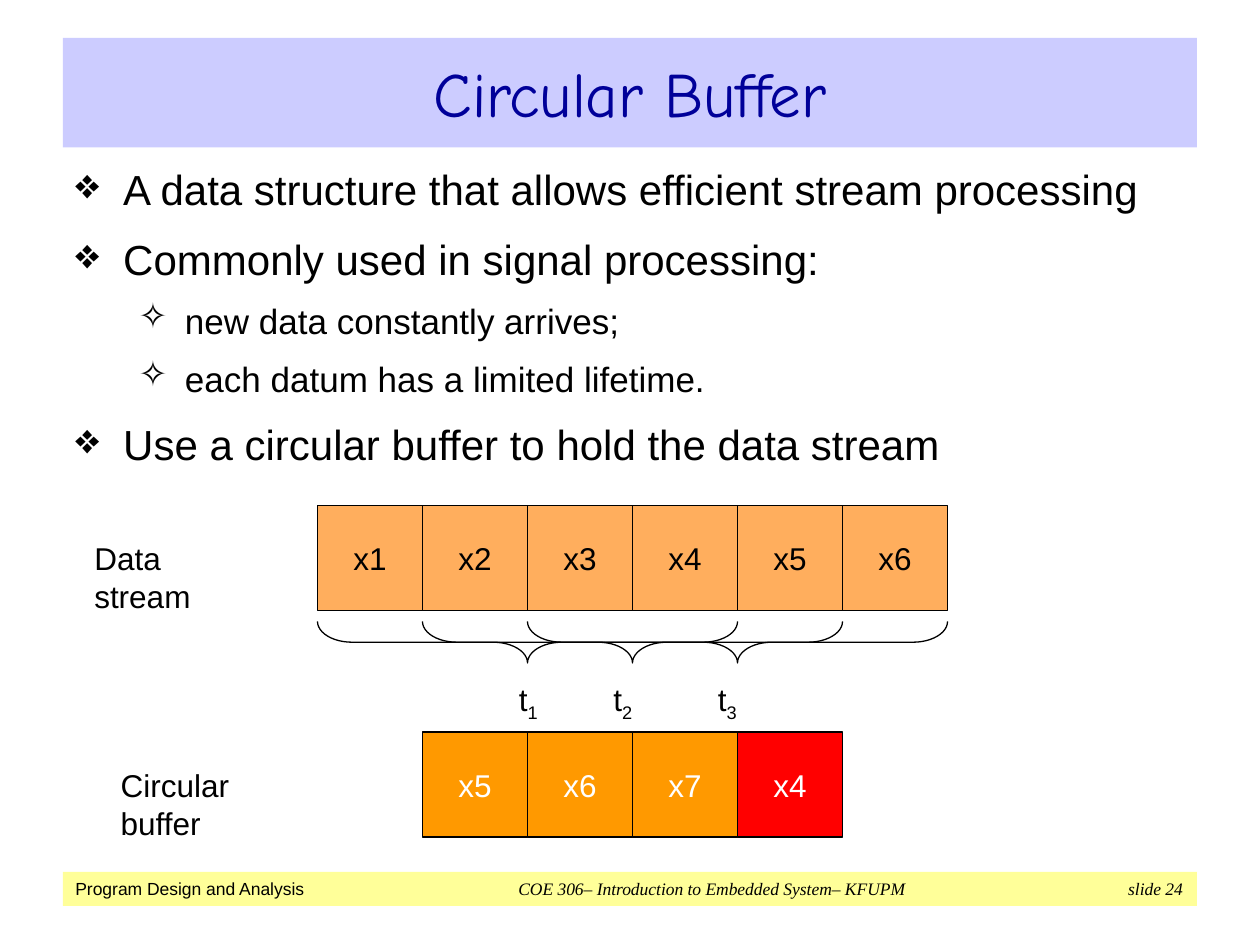
from lxml import etree
from pptx import Presentation
from pptx.dml.color import RGBColor
from pptx.enum.shapes import MSO_SHAPE
from pptx.enum.text import MSO_ANCHOR, PP_ALIGN
from pptx.oxml.ns import qn
from pptx.util import Inches, Pt

RECT, BRACE = MSO_SHAPE.RECTANGLE, MSO_SHAPE.LEFT_BRACE
MIDDLE, TOP = MSO_ANCHOR.MIDDLE, MSO_ANCHOR.TOP
CENTER, LEFT = PP_ALIGN.CENTER, PP_ALIGN.LEFT

BLACK = RGBColor(0x00, 0x00, 0x00)
WHITE = RGBColor(0xFF, 0xFF, 0xFF)
NAVY = RGBColor(0x00, 0x00, 0x99)
LAVENDER = RGBColor(0xCC, 0xCC, 0xFF)
YELLOW = RGBColor(0xFF, 0xFF, 0x99)
PEACH = RGBColor(0xFF, 0xAE, 0x5D)
ORANGE = RGBColor(0xFF, 0x99, 0x00)
RED = RGBColor(0xFF, 0x00, 0x00)

CELL = 5 / 6           # side of one square
STREAM_LEFT = 2.52
STREAM_TOP, BUFFER_TOP = 4.01, 5.81


def add_run(p, text, size=18, color=BLACK, font="Arial", italic=False):
    r = p.add_run()
    r.text = text
    for name, value in {"size": Pt(size), "name": font, "italic": italic}.items():
        setattr(r.font, name, value)
    r.font.color.rgb = color
    return r


def add_box(x, y, w, h, fill=None, line=None, kind=None, wrap=True,
            anchor=TOP, align=LEFT):
    at = [Inches(v) for v in (x, y, w, h)]
    if kind is None:
        sp = s.shapes.add_textbox(*at)
    else:
        sp = s.shapes.add_shape(kind, *at)
        sp.shadow.inherit = False
        for fmt, color in ((sp.fill, fill), (sp.line.fill, line)):
            if color is None:
                fmt.background()
            else:
                fmt.solid()
                fmt.fore_color.rgb = color
        if line is not None:
            sp.line.width = Pt(0.75)
    tf = sp.text_frame
    tf.word_wrap = wrap
    tf.vertical_anchor = anchor
    tf.paragraphs[0].alignment = align
    return sp


prs = Presentation()
prs.slide_width, prs.slide_height = Inches(10), Inches(7.5)
s = prs.slides.add_slide(prs.slide_layouts[6])

# Footer bar: one line with a centre tab and a right tab
sp = add_box(0.5, 6.92, 9, 0.27, YELLOW, kind=RECT, anchor=MIDDLE)
p = sp.text_frame.paragraphs[0]
tabs = etree.SubElement(p._p.get_or_add_pPr(), qn("a:tabLst"))
for pos, algn in ((5.05, "ctr"), (8.79, "r")):
    etree.SubElement(tabs, qn("a:tab"), pos=str(Inches(pos)), algn=algn)
add_run(p, "Program Design and Analysis", 10)
for text in ("\tCOE 306– Introduction to Embedded System– KFUPM", "\tslide 24"):
    add_run(p, text, 10, font="Times New Roman", italic=True)

# Title
sp = add_box(0.5, 0.3, 9, 0.87, LAVENDER, kind=RECT, anchor=MIDDLE, align=CENTER)
add_run(sp.text_frame.paragraphs[0], "Circular Buffer", 36, NAVY, "Comic Neue")

# Bullet list: size, space before, margin, hanging indent, bullet for each level
LEVELS = [(24, 11, 0.38, 0.38, "❖"), (20, 9, 0.87, 0.37, "✧")]
bullets = [
    (0, "A data structure that allows efficient stream processing"),
    (0, "Commonly used in signal processing:"),
    (1, "new data constantly arrives;"),
    (1, "each datum has a limited lifetime."),
    (0, "Use a circular buffer to hold the data stream"),
]
tf = add_box(0.5, 1.25, 9, 5.62).text_frame
for i, (level, text) in enumerate(bullets):
    size, before, margin, hang, char = LEVELS[level]
    p = tf.paragraphs[0] if i == 0 else tf.add_paragraph()
    p.level = level
    p.space_before = Pt(before)
    pPr = p._p.get_or_add_pPr()
    pPr.set("marL", str(Inches(margin)))
    pPr.set("indent", str(-Inches(hang)))
    etree.SubElement(pPr, qn("a:buChar"), char=char)
    add_run(p, text, size)

# Rows of cells: first column, top, text colour, (label, fill) of each cell
rows = [
    (0, STREAM_TOP, BLACK, [(f"x{n}", PEACH) for n in range(1, 7)]),
    (1, BUFFER_TOP, WHITE,
     [("x5", ORANGE), ("x6", ORANGE), ("x7", ORANGE), ("x4", RED)]),
]
for first, top, color, cells in rows:
    for col, (label, fill) in enumerate(cells, first):
        sp = add_box(STREAM_LEFT + col * CELL, top, CELL, CELL, fill, BLACK,
                     RECT, wrap=False, anchor=MIDDLE, align=CENTER)
        add_run(sp.text_frame.paragraphs[0], label, color=color)

# Windows of four cells, each a brace turned to point down, with its time
for i, label_left in enumerate((4.02, 4.77, 5.6)):
    span, depth = 4 * CELL, 0.33
    middle = STREAM_LEFT + i * CELL + span / 2
    sp = add_box(middle - depth / 2, 3.43, depth, span, line=BLACK, kind=BRACE)
    sp.rotation = 270
    sp.adjustments[0] = 0.83
    p = add_box(label_left, 5.35, 0.37, 0.4, wrap=False).text_frame.paragraphs[0]
    add_run(p, "t")
    r = add_run(p, str(i + 1))
    r._r.get_or_add_rPr().set("baseline", "-25000")

# Row names
for x, y, w, text in ((0.65, 4.23, 1.45, "Data stream"),
                      (0.86, 6.03, 1.67, "Circular buffer")):
    add_run(add_box(x, y, w, 0.4).text_frame.paragraphs[0], text)

prs.save("out.pptx")
